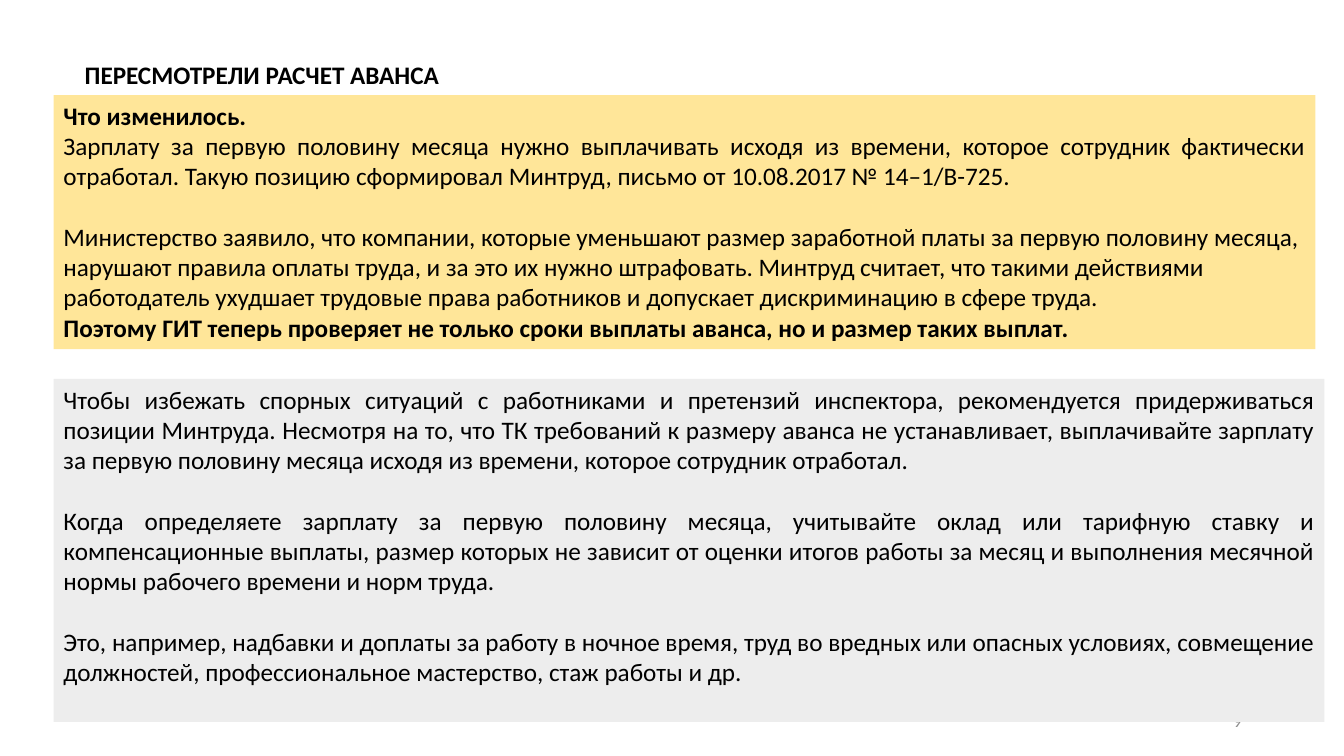
from pptx import Presentation
from pptx import util as u
from pptx.dml.color import RGBColor
from pptx.enum import shapes, text

COLORS = {"ink": "000000", "number": "8C8C8C", "change": "FFE699", "advice": "EDEDED"}
LEFT = 1.35

CHANGE = [
    ("Что изменилось.", {"bold": True}),
    ("Зарплату за первую половину месяца нужно выплачивать исходя из времени, которое "
     "сотрудник фактически отработал. Такую позицию сформировал Минтруд, письмо от "
     "10.08.2017 № 14–1/В-725.", {"align": "JUSTIFY"}),
    ("Министерство заявило, что компании, которые уменьшают размер заработной платы за "
     "первую половину месяца, нарушают правила оплаты труда, и за это их нужно штрафовать. "
     "Минтруд считает, что такими действиями работодатель ухудшает трудовые права "
     "работников и допускает дискриминацию в сфере труда.", {"gap": True}),
    ("Поэтому ГИТ теперь проверяет не только сроки выплаты аванса, но и размер таких "
     "выплат.", {"bold": True}),
]
ADVICE = [
    ("Чтобы избежать спорных ситуаций с работниками и претензий инспектора, рекомендуется "
     "придерживаться позиции Минтруда. Несмотря на то, что ТК требований к размеру аванса "
     "не устанавливает, выплачивайте зарплату за первую половину месяца исходя из времени, "
     "которое сотрудник отработал.", {"align": "JUSTIFY"}),
    ("Когда определяете зарплату за первую половину месяца, учитывайте оклад или тарифную "
     "ставку и компенсационные выплаты, размер которых не зависит от оценки итогов работы "
     "за месяц и выполнения месячной нормы рабочего времени и норм труда.",
     {"align": "JUSTIFY", "gap": True}),
    ("Это, например, надбавки и доплаты за работу в ночное время, труд во вредных или "
     "опасных условиях, совмещение должностей, профессиональное мастерство, стаж работы "
     "и др.", {"align": "JUSTIFY", "gap": True}),
]


class SlideBuilder:
    font = "Calibri"
    size = 18
    line_height = 21.6

    def __init__(self, slide):
        self.slide = slide

    def style(self, paragraph, bold=False, align="LEFT", gap=False, size=None, color="ink"):
        paragraph.alignment = getattr(text.PP_ALIGN, align)
        paragraph.space_before = u.Pt(self.line_height if gap else 0)
        for run in paragraph.runs:
            run.font.name = self.font
            run.font.size = u.Pt(size or self.size)
            run.font.bold = bold
            run.font.color.rgb = RGBColor.from_string(COLORS[color])

    def title(self, wording, left, top, width, height):
        heading = self.slide.shapes.title
        heading.left, heading.top = u.Cm(left), u.Cm(top)
        heading.width, heading.height = u.Cm(width), u.Cm(height)
        frame = heading.text_frame
        frame.text = wording
        frame.word_wrap = False
        frame.auto_size = text.MSO_AUTO_SIZE.NONE
        frame.vertical_anchor = text.MSO_ANCHOR.TOP
        self.style(frame.paragraphs[0], bold=True)

    def page_number(self, wording, left, top, width, height):
        number = self.slide.shapes.add_textbox(*map(u.Cm, (left, top, width, height)))
        frame = number.text_frame
        frame.text = wording
        frame.word_wrap = True
        frame.vertical_anchor = text.MSO_ANCHOR.MIDDLE
        self.style(frame.paragraphs[0], align="RIGHT", size=12, color="number")

    def panel(self, paragraphs, fill, left, top, width, height):
        panel = self.slide.shapes.add_shape(
            shapes.MSO_SHAPE.RECTANGLE, *map(u.Cm, (left, top, width, height)))
        panel.shadow.inherit = False
        panel.fill.solid()
        panel.fill.fore_color.rgb = RGBColor.from_string(COLORS[fill])
        panel.line.fill.background()
        frame = panel.text_frame
        frame.word_wrap = True
        frame.vertical_anchor = text.MSO_ANCHOR.TOP
        frame.text = "\n".join(wording for wording, _ in paragraphs)
        for paragraph, (_, look) in zip(frame.paragraphs, paragraphs):
            self.style(paragraph, **look)


def main():
    deck = Presentation()
    deck.slide_width, deck.slide_height = u.Cm(33.87), u.Cm(19.05)
    builder = SlideBuilder(deck.slides.add_slide(deck.slide_layouts[5]))
    builder.title("ПЕРЕСМОТРЕЛИ РАСЧЕТ АВАНСА", 1.88, 1.37, 9.53, 1.02)
    builder.page_number("9", 23.93, 17.65, 7.62, 1.02)
    builder.panel(CHANGE, "change", LEFT, 2.4, 31.8, 6.4)
    builder.panel(ADVICE, "advice", LEFT, 9.55, 32.03, 8.64)
    deck.save("out.pptx")


if __name__ == "__main__":
    main()
